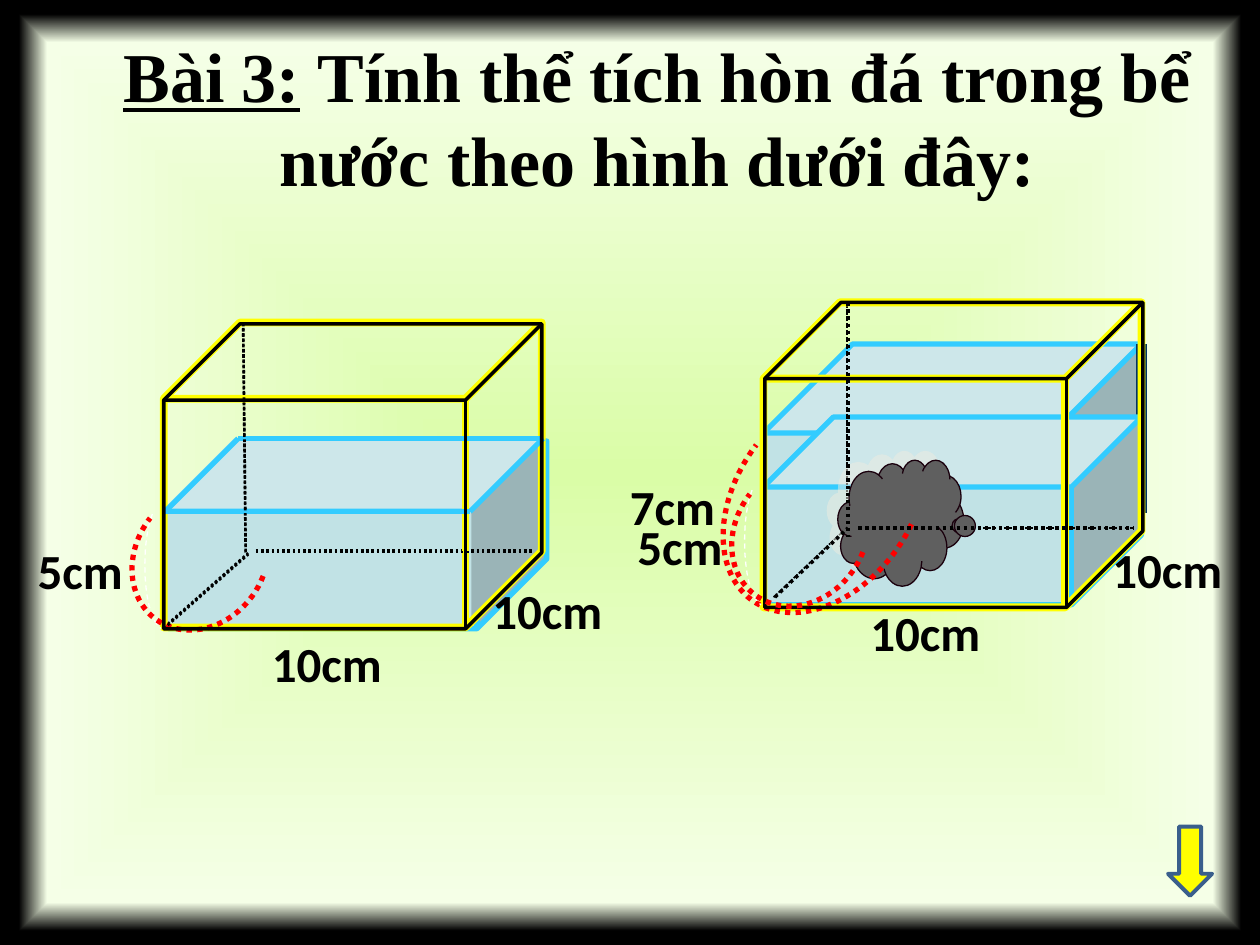
from lxml import etree
from pptx import Presentation
from pptx.dml.color import RGBColor
from pptx.enum.dml import MSO_LINE
from pptx.enum.shapes import MSO_CONNECTOR, MSO_SHAPE
from pptx.enum.text import MSO_AUTO_SIZE, PP_ALIGN
from pptx.oxml import parse_xml
from pptx.oxml.ns import nsdecls, qn
from pptx.util import Inches, Pt

BLACK = RGBColor(0x00, 0x00, 0x00)
WHITE = RGBColor(0xFF, 0xFF, 0xFF)
YELLOW = RGBColor(0xFF, 0xFF, 0x00)
RED = RGBColor(0xFF, 0x00, 0x00)
WATER = RGBColor(0xC1, 0xE2, 0xE5)
WATER_EDGE = RGBColor(0x33, 0xCC, 0xFF)
NAVY = RGBColor(0x00, 0x33, 0x66)
STONE = RGBColor(0x5F, 0x5F, 0x5F)
STONE_EDGE = RGBColor(0x1A, 0x00, 0x0D)
STONE_SHADOW = RGBColor(0xEE, 0xEC, 0xE1)
ARROW_EDGE = RGBColor(0x3A, 0x5F, 0x8C)
GLOW = ((0, RGBColor(0xDA, 0xFD, 0xA7)), (91, RGBColor(0xF5, 0xFF, 0xE7)), (97, BLACK))

STRAIGHT = MSO_CONNECTOR.STRAIGHT
CUBE, ARC = MSO_SHAPE.CUBE, MSO_SHAPE.ARC
CLOUD, ARROW = MSO_SHAPE.CLOUD_CALLOUT, MSO_SHAPE.RIGHT_ARROW
DOTTED, DASHED = MSO_LINE.ROUND_DOT, MSO_LINE.DASH
GROW, CENTER = MSO_AUTO_SIZE.SHAPE_TO_FIT_TEXT, PP_ALIGN.CENTER

LEFT_EDGES = ((0.63, 0, 0.65, 1.83), (0, 2.42, 0.67, 1.83), (0.73, 1.81, 2.93, 1.81))
RIGHT_EDGES = ((0.66, 0, 0.66, 1.86), (0.08, 2.34, 0.66, 1.79), (0.74, 1.79, 2.93, 1.79))
BRACE_CURVES = (
    ((0.06, 0), (0.02, 0.1), (0, 0.25), (0, 0.41)),
    ((0, 0.41), (0, 0.65), (0.05, 0.86), (0.13, 0.91)),
)
LABEL_FONT = {"name": "Calibri", "size": Pt(28), "bold": True}
TITLE_FONT = {"name": "Times New Roman", "size": Pt(40), "bold": True}


def inches(values):
    """Turn numbers into lengths."""
    return [Inches(value) for value in values]


def style_line(line, color, width, dash=None):
    """Colour a line, or hide it when no colour is given."""
    if color is None:
        line.fill.background()
        return
    line.color.rgb = color
    line.width = Pt(width)
    if dash:
        line.dash_style = dash


def add_figure(shapes, kind, box, adjustments=(), fill=None, line=None, width=3,
               dash=None, rotation=0):
    """Add a preset shape in the given box."""
    figure = shapes.add_shape(kind, *inches(box))
    figure.shadow.inherit = False
    figure.rotation = rotation
    for index, value in enumerate(adjustments):
        figure.adjustments[index] = value
    if fill is None:
        figure.fill.background()
    else:
        figure.fill.solid()
        figure.fill.fore_color.rgb = fill
    style_line(figure.line, line, width, dash)
    return figure


def add_edge(shapes, ends, color, width, dash=None):
    """Add a straight line between two points."""
    edge = shapes.add_connector(STRAIGHT, *inches(ends))
    style_line(edge.line, color, width, dash)
    etree.SubElement(edge.element.spPr, qn("a:effectLst"))


def add_text(shapes, box, spans, font, align=None):
    """Add a one-paragraph text box from pairs of wording and font changes."""
    text_box = shapes.add_textbox(*inches(box))
    frame = text_box.text_frame
    frame.word_wrap = True
    frame.auto_size = GROW
    para = frame.paragraphs[0]
    para.alignment = align
    for wording, changes in spans:
        span = para.add_run()
        span.text = wording
        span.font.color.rgb = BLACK
        for name, value in {**font, **changes}.items():
            setattr(span.font, name, value)
    for element in text_box.element.iter(qn("a:p")):
        spacing = etree.SubElement(element.get_or_add_pPr(), qn("a:spcBef"))
        etree.SubElement(spacing, qn("a:spcPct"), val="50000")


def add_label(shapes, left, top, wording):
    """Add a measurement label."""
    width = 0.92 if len(wording) == 3 else 1.25
    add_text(shapes, (left, top, width, 0.57), [(wording, {})], LABEL_FONT)


def add_tank(page, left, top, hidden_edges, edge_widths, color, width, water=None):
    """Add the glass tank with its hidden edges and any water inside."""
    shapes = page.shapes.add_group_shape().shapes
    if water:
        add_figure(shapes, CUBE, water, [0.372], WATER)
    for (x1, y1, x2, y2), edge_width in zip(hidden_edges, edge_widths):
        ends = (left + x1, top + y1, left + x2, top + y2)
        add_edge(shapes, ends, BLACK, edge_width, DOTTED)
    add_figure(shapes, CUBE, (left, top, 3, 2.42), [0.25], None, color, width)


def add_depth_mark(page, left, top, label_left, label_top):
    """Add the dashed depth curve and its label."""
    shapes = page.shapes.add_group_shape().shapes
    points = []
    for start, first, second, end in BRACE_CURVES:
        for step in range(9):
            t = step / 8
            weights = ((1 - t) ** 3, 3 * t * (1 - t) ** 2, 3 * t * t * (1 - t), t ** 3)
            x, y = (sum(weight * value for weight, value in zip(weights, axis))
                    for axis in zip(start, first, second, end))
            points.append(inches((left + x, top + y)))
    builder = shapes.build_freeform(*points[0], scale=1.0)
    builder.add_line_segments(points[1:], close=False)
    curve = builder.convert_to_shape()
    curve.shadow.inherit = False
    curve.fill.background()
    style_line(curve.line, WHITE, 0.75, DASHED)
    add_label(shapes, label_left, label_top, "5cm")


def add_depth_arc(page, box):
    """Add a red dotted arc beside a depth label."""
    angles = [degrees * 0.6 for degrees in (160.02, 2.84)]
    add_figure(page.shapes, ARC, box, angles, None, RED, 3, DOTTED, 215.8)


def add_stone(page, box):
    """Add the stone with its pale offset shadow."""
    stone = add_figure(page.shapes, CLOUD, box, [0.471, 0.023], STONE, STONE_EDGE, 0.75)
    effects = stone.element.spPr.find(qn("a:effectLst"))
    shadow = etree.SubElement(effects, qn("a:outerShdw"), blurRad="0",
                              dist=str(Pt(7.8)), dir=str(220 * 60000), algn="ctr")
    color = etree.SubElement(shadow, qn("a:srgbClr"), val=str(STONE_SHADOW))
    etree.SubElement(color, qn("a:alpha"), val="50000")


def add_water_surface(page, left, top, right, bottom, slant):
    """Outline the slanted water surface."""
    corners = [(left, bottom), (right - slant, bottom), (right, top), (left + slant, top)]
    for start, end in zip(corners, corners[1:] + corners[:1]):
        add_edge(page.shapes, (*start, *end), WATER_EDGE, 3)


def paint_background(page):
    """Fill the page with a glow that darkens at the border."""
    page.background.fill.solid()
    solid = next(page.element.iter(qn("a:solidFill")))
    stops = "".join(f'<a:gs pos="{place * 1000}"><a:srgbClr val="{color}"/></a:gs>'
                    for place, color in GLOW)
    gradient = parse_xml(
        f'<a:gradFill {nsdecls("a")} rotWithShape="1"><a:gsLst>{stops}</a:gsLst>'
        '<a:path path="shape"><a:fillToRect l="50000" t="50000" r="50000" b="50000"/>'
        '</a:path></a:gradFill>')
    solid.getparent().replace(solid, gradient)


def build_slide(page):
    """Place the title, both tanks and the arrow from back to front."""
    shapes = page.shapes
    paint_background(page)
    add_figure(shapes, CUBE, (1.34, 3.5, 3, 1.49), [0.372], WATER, WATER_EDGE)
    raised_water = shapes.add_group_shape().shapes
    add_figure(raised_water, CUBE, (6.06, 2.73, 3, 2.02), [0.35], WATER, WATER_EDGE)
    add_edge(raised_water, (9.06, 2.73, 9.06, 4.07), NAVY, 6)
    add_figure(shapes, CUBE, (6.06, 3.31, 3, 1.49), [0.372], WATER, WATER_EDGE)
    add_tank(page, 6.06, 2.4, RIGHT_EDGES, (1, 1, 1.5), YELLOW, 4.5)
    add_stone(page, (6.65, 3.65, 1, 1))
    add_label(shapes, 4.9, 3.73, "7cm")
    title = [("Bài 3:", {"underline": True}), (" ", {"bold": False}),
             ("Tính thể tích hòn đá trong bể nước theo hình dưới đây:", {})]
    add_text(shapes, (0.31, 0.21, 9.81, 1.45), title, TITLE_FONT, CENTER)
    add_label(shapes, 6.81, 4.73, "10cm")
    add_tank(page, 1.3, 2.56, LEFT_EDGES, (1.5,) * 3, YELLOW, 4.5, (1.3, 3.48, 3, 1.5))
    add_water_surface(page, 1.31, 3.48, 4.31, 4.06, 0.58)
    add_depth_mark(page, 1.15, 4.08, 0.2, 4.24)
    for left, top in ((2.06, 4.98), (3.81, 4.56), (8.73, 4.23)):
        add_label(shapes, left, top, "10cm")
    add_depth_arc(page, (5.85, 2.98, 1.39, 1.97))
    add_depth_arc(page, (1.08, 3.83, 1.02, 1.2))
    add_tank(page, 6.07, 2.4, RIGHT_EDGES, (2,) * 3, BLACK, 2)
    add_tank(page, 1.3, 2.57, LEFT_EDGES, (1.5,) * 3, BLACK, 2)
    add_depth_mark(page, 5.91, 3.89, 4.96, 4.05)
    add_depth_arc(page, (5.84, 3.64, 1.02, 1.2))
    add_figure(shapes, ARROW, (9.17, 6.66, 0.55, 0.35), (), YELLOW, ARROW_EDGE, 2.25,
               rotation=90)


def main():
    """Build and save the deck."""
    deck = Presentation()
    deck.slide_width, deck.slide_height = inches((10, 7.5))
    build_slide(deck.slides.add_slide(deck.slide_layouts[6]))
    deck.save("out.pptx")


if __name__ == "__main__":
    main()
